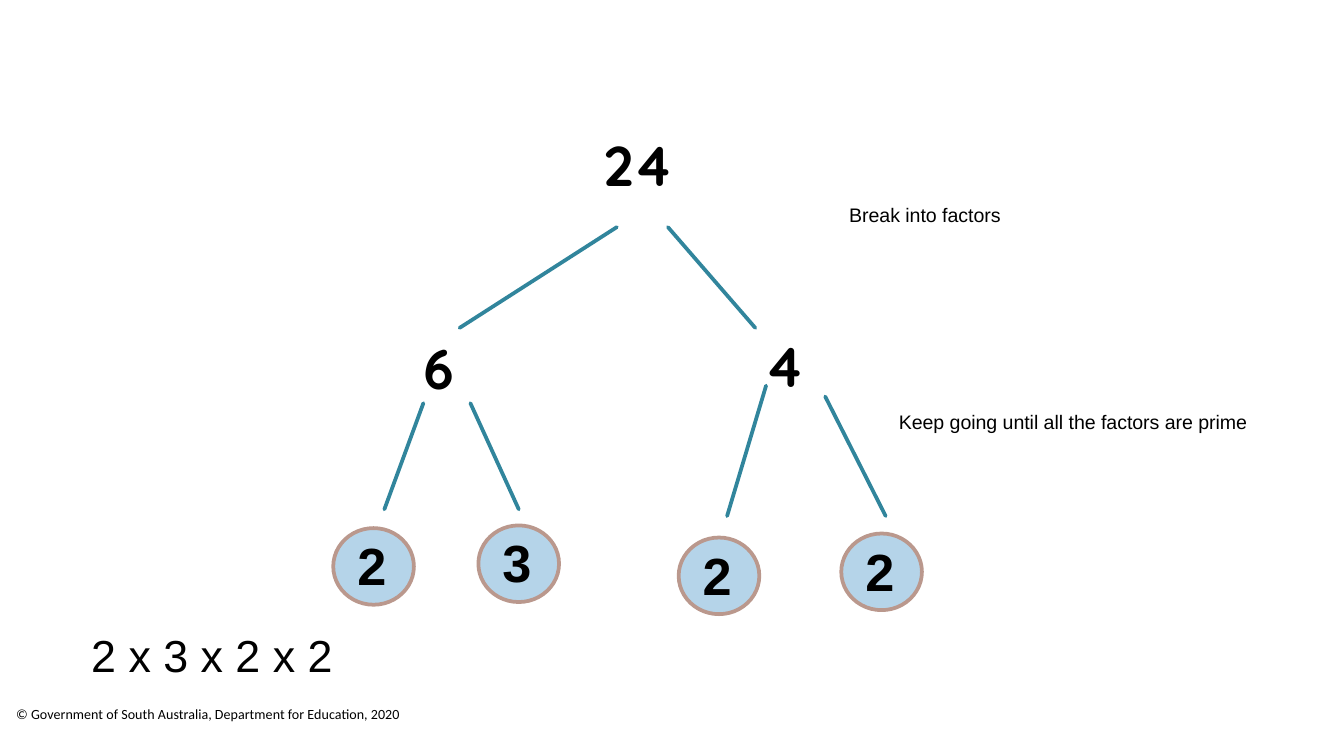
from lxml import etree
from pptx import Presentation
from pptx.dml.color import RGBColor
from pptx.enum.shapes import MSO_CONNECTOR, MSO_SHAPE
from pptx.enum.text import MSO_AUTO_SIZE
from pptx.oxml.ns import qn
from pptx.util import Inches, Pt


def rgb(hex_string):
    return RGBColor.from_string(hex_string)


def add_label(shapes, text, box, size, font="Arial", bold=False,
              insets=(0.1, 0.05, 0.1, 0.05), wrap=True, grow=False):
    label = shapes.add_textbox(*map(Inches, box))
    frame = label.text_frame
    frame.word_wrap = wrap
    frame.auto_size = MSO_AUTO_SIZE.SHAPE_TO_FIT_TEXT if grow else MSO_AUTO_SIZE.NONE
    (frame.margin_left, frame.margin_top,
     frame.margin_right, frame.margin_bottom) = map(Inches, insets)
    paragraph = frame.paragraphs[0]
    paragraph.text = text
    paragraph.font.name = font
    paragraph.font.size = Pt(size)
    paragraph.font.bold = bold
    paragraph.font.color.rgb = rgb("000000")


# Widescreen slide, 16:9
prs = Presentation()
prs.slide_width = Inches(10)
prs.slide_height = Inches(10 * 9 / 16)
slide = prs.slides.add_slide(prs.slide_layouts[6])

# Copyright line
add_label(slide.shapes,
          "© Government of South Australia, Department for Education, 2020",
          (0, 5.25, 4.57, 0.38), 7.5, "Calibri", insets=(0.12, 0, 0, 0))

# Composite numbers
for number, left, top in [("24", 4.42, 0.93), ("6", 3.08, 2.44), ("4", 5.62, 2.43)]:
    add_label(slide.shapes, number, (left, top, 0.67, 0.62), 30, "Quicksand",
              bold=True, insets=(0.07, 0.04, 0.07, 0.04))

# Branches of the factor tree
branches = [
    (4.59, 1.69, 3.42, 2.44), (4.97, 1.69, 5.62, 2.44),  # 24 to 6 and 4
    (5.7, 2.87, 5.41, 3.84), (6.14, 2.95, 6.59, 3.84),   # 4 to 2 and 2
    (3.15, 3, 2.86, 3.79), (3.5, 3, 3.86, 3.79),         # 6 to 2 and 3
]
for ends in branches:
    branch = slide.shapes.add_connector(MSO_CONNECTOR.STRAIGHT, *map(Inches, ends))
    branch.line.color.rgb = rgb("31859C")
    branch.line.width = Pt(2)
    branch.line._get_or_add_ln().set("cap", "rnd")
    etree.SubElement(branch._element.spPr, qn("a:effectLst"))

# Product and explanations
for text, box, size in [
    ("2 x 3 x 2 x 2", (0.58, 4.62, 2.11, 0.5), 24),
    ("Break into factors", (6.22, 1.46, 1.35, 0.28), 10.5),
    ("Keep going until all the factors are prime", (6.59, 3, 2.84, 0.28), 10.5),
]:
    add_label(slide.shapes, text, box, size, wrap=False, grow=True)

# Prime factors, each grouped with its circle
for prime, left, top in [("2", 2.48, 3.93), ("2", 5.05, 4),
                         ("2", 6.26, 3.97), ("3", 3.56, 3.91)]:
    prime_group = slide.shapes.add_group_shape()
    circle = prime_group.shapes.add_shape(
        MSO_SHAPE.OVAL, Inches(left), Inches(top), Inches(0.6), Inches(0.57))
    circle.shadow.inherit = False
    circle.fill.solid()
    circle.fill.fore_color.rgb = rgb("B5D4E9")
    circle.line.color.rgb = rgb("BA988D")
    circle.line.width = Pt(2)
    add_label(prime_group.shapes, prime, (left + 0.08, top - 0.01, 0.39, 0.57), 28,
              bold=True, grow=True)

prs.save("out.pptx")
